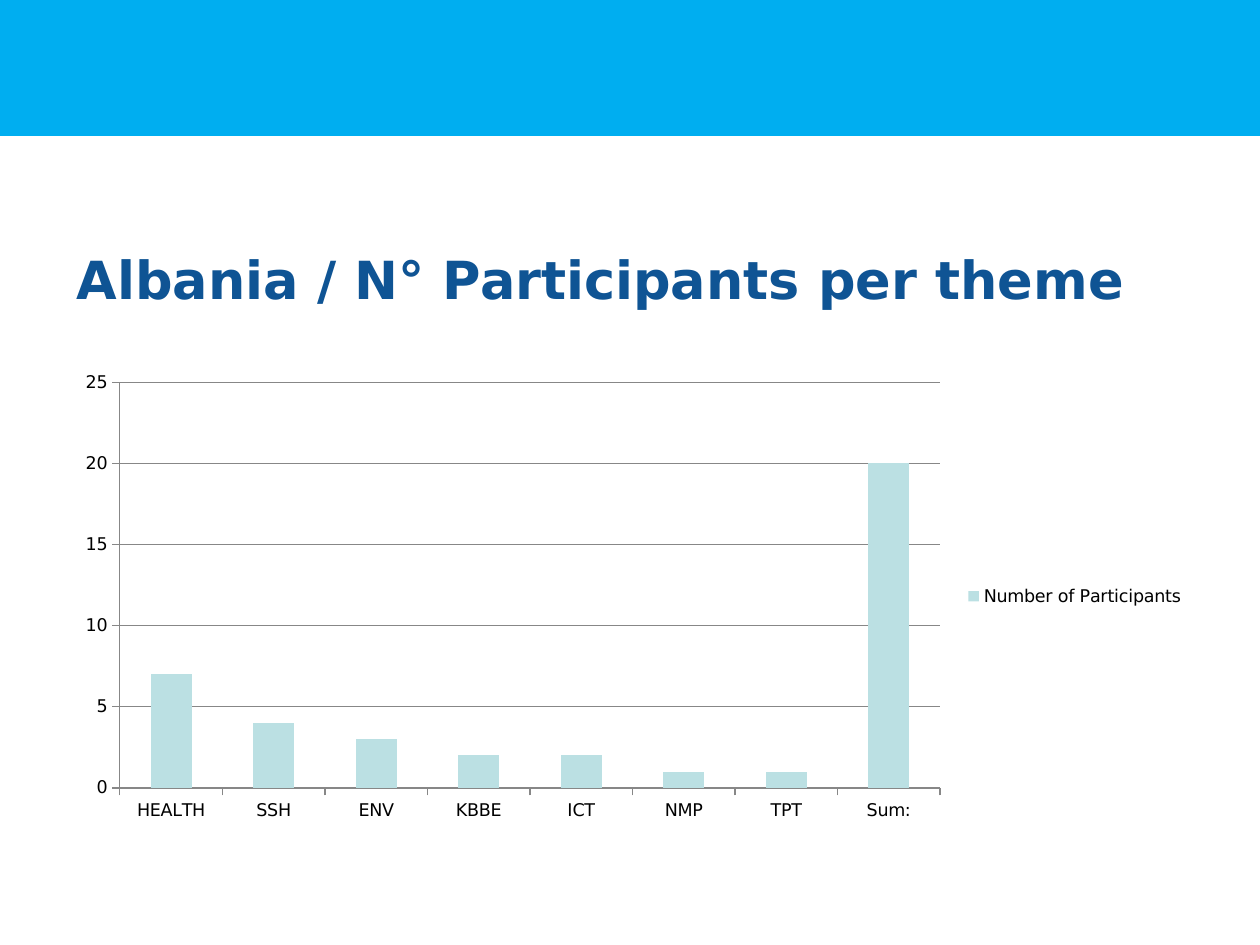
import pptx
import pptx.chart.data
import pptx.dml.color
import pptx.enum.chart
import pptx.enum.shapes
import pptx.enum.text
import pptx.util

Cm = pptx.util.Cm
Pt = pptx.util.Pt
FONT = "DejaVu Sans"
COLORS = {
    "band": "00AEF0",
    "title": "0F5494",
    "bar": "BBE0E3",
    "text": "000000",
    "line": "878787",
}
COUNTS = {
    "HEALTH": 7, "SSH": 4, "ENV": 3, "KBBE": 2,
    "ICT": 2, "NMP": 1, "TPT": 1, "Sum:": 20,
}


def color(name):
    return pptx.dml.color.RGBColor.from_string(COLORS[name])


def style(font, size, name, bold=False):
    font.name = FONT
    font.size = Pt(size)
    font.bold = bold
    font.color.rgb = color(name)


def add_band(slide, width, height):
    kind = pptx.enum.shapes.MSO_SHAPE.RECTANGLE
    band = slide.shapes.add_shape(kind, 0, 0, width, height)
    band.shadow.inherit = False
    band.fill.solid()
    band.fill.fore_color.rgb = color("band")
    band.line.fill.background()


def add_title(slide, text):
    box = slide.shapes.add_textbox(Cm(1.3), Cm(4.32), Cm(22.86), Cm(2.59))
    frame = box.text_frame
    frame.word_wrap = True
    frame.vertical_anchor = pptx.enum.text.MSO_ANCHOR.MIDDLE
    frame.text = text
    style(frame.paragraphs[0].runs[0].font, 30, "title", True)


def draw_line(line):
    line.color.rgb = color("line")
    line.width = Pt(0.75)


def style_axis(axis):
    axis.major_tick_mark = pptx.enum.chart.XL_TICK_MARK.OUTSIDE
    axis.minor_tick_mark = pptx.enum.chart.XL_TICK_MARK.NONE
    draw_line(axis.format.line)
    style(axis.tick_labels.font, 10, "text")


def add_bars(slide, name, counts):
    data = pptx.chart.data.CategoryChartData(number_format="#,##0")
    data.categories = list(counts)
    data.add_series(name, list(counts.values()))
    kind = pptx.enum.chart.XL_CHART_TYPE.COLUMN_CLUSTERED
    frame = slide.shapes.add_chart(
        kind, Cm(1.27), Cm(7.32), Cm(22.86), Cm(9.4), data)
    chart = frame.chart
    style(chart.font, 10, "text")
    chart.has_title = False
    chart.has_legend = True
    chart.legend.position = pptx.enum.chart.XL_LEGEND_POSITION.RIGHT
    chart.legend.include_in_layout = False
    style(chart.legend.font, 10, "text")

    plot = chart.plots[0]
    plot.gap_width = 150
    plot.vary_by_categories = False
    fill = plot.series[0].format.fill
    fill.solid()
    fill.fore_color.rgb = color("bar")

    style_axis(chart.category_axis)
    axis = chart.value_axis
    style_axis(axis)
    axis.minimum_scale, axis.maximum_scale = 0, 25
    axis.major_unit = 5
    axis.has_major_gridlines = True
    draw_line(axis.major_gridlines.format.line)


def main():
    """Build the slide of participants per theme."""
    deck = pptx.Presentation()
    deck.slide_width, deck.slide_height = Cm(25.4), Cm(19.05)
    slide = deck.slides.add_slide(deck.slide_layouts[6])
    add_band(slide, deck.slide_width, Cm(2.74))
    add_title(slide, "Albania / N° Participants per theme")
    add_bars(slide, "Number of Participants", COUNTS)
    deck.save("out.pptx")


if __name__ == "__main__":
    main()
